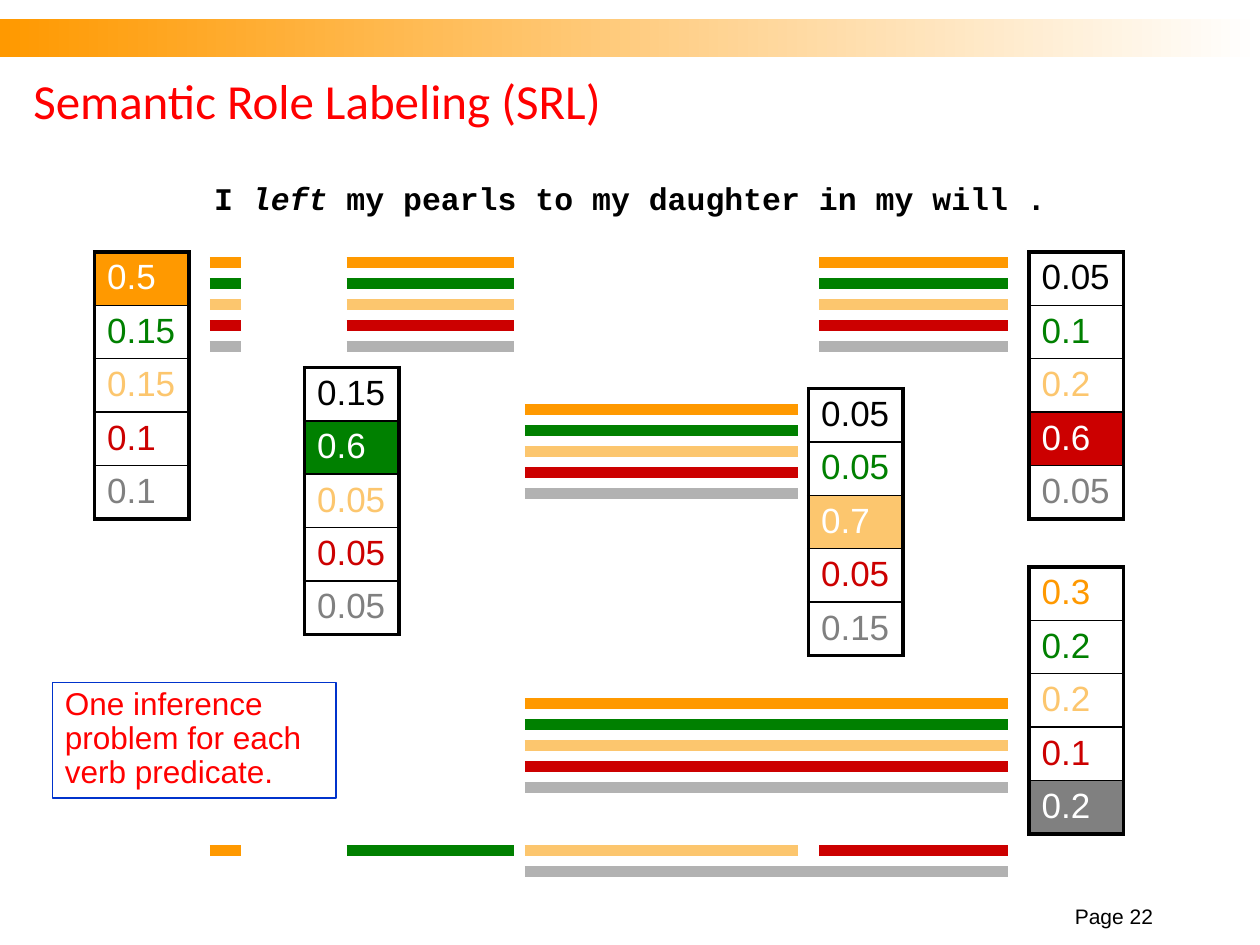
import lxml.etree
import pptx
import pptx.dml.color
import pptx.enum.dml
import pptx.enum.shapes
import pptx.enum.text
import pptx.oxml.ns
import pptx.util

THEME = {
    "roles": ["FF9900", "008000", "FCC66E", "CC0000", "B2B2B2"],
    "last_score": "808080", "text": "000000", "paper": "FFFFFF",
    "accent": "FF0000", "note_line": "0033CC",
    "title": ("Calibri", 28), "sentence": ("Courier New", 18),
    "score": ("Arial", 20), "note": ("Arial", 18), "page": ("Arial", 12),
    "bar": 6, "outer": 2.25, "inner": 1,
}
UNIT = pptx.util.Inches(1) // 12  # the slide is a grid of 120 columns by 90 rows
rgb = pptx.dml.color.RGBColor.from_string
align = pptx.enum.text.PP_ALIGN
anchor = pptx.enum.text.MSO_ANCHOR
rectangle = pptx.enum.shapes.MSO_SHAPE.RECTANGLE


def add_span(para, text, style, color, bold=False, italic=False):
    span = para.add_run()
    span.text = text
    span.font.name, size = THEME[style]
    span.font.size = pptx.util.Pt(size)
    span.font.color.rgb = rgb(color)
    span.font.bold = bold
    span.font.italic = italic


def grid(*cells):
    return [round(cell * UNIT) for cell in cells]


deck = pptx.Presentation()
deck.slide_width, deck.slide_height = grid(120, 90)
page = deck.slides.add_slide(deck.slide_layouts[6])
shapes = page.shapes

# Gradient band
band = shapes.add_shape(rectangle, *grid(0, 1.8, 120, 3.6))
band.shadow.inherit = False
band.line.fill.background()
band.fill.gradient()
band.fill.gradient_angle = 0
for stop, color in zip(band.fill.gradient_stops, (THEME["roles"][0], THEME["paper"])):
    stop.color.rgb = rgb(color)

# Title
title = shapes.add_textbox(*grid(2, 6, 108, 7)).text_frame
title.word_wrap = True
title.vertical_anchor = anchor.MIDDLE
add_span(title.paragraphs[0], "Semantic Role Labeling (SRL)", "title", THEME["accent"])

# Example sentence, with the predicate in italics
sentence = shapes.add_textbox(*grid(6, 16, 108, 65)).text_frame
sentence.word_wrap = True
sentence.margin_top = pptx.util.Inches(0.09)
para = sentence.paragraphs[0]
para.alignment = align.CENTER
for text, italic in (("I ", False), ("left", True),
                     (" my pearls to my daughter in my will .", False)):
    add_span(para, text, "sentence", THEME["text"], bold=True, italic=italic)

# Candidate arguments: one bar per role, then the chosen role of each below
arguments = [(20, 23, 25), (33, 49, 25), (50, 76, 39), (78, 96, 25), (50, 96, 67)]
bars = [(left, right, top + 2 * role, color)
        for left, right, top in arguments
        for role, color in enumerate(THEME["roles"])]
bars += [(left, right, 83 if role == 4 else 81, THEME["roles"][role])
         for role, (left, right, top) in enumerate(arguments)]
for left, right, row, color in bars:
    bar = shapes.add_connector(pptx.enum.shapes.MSO_CONNECTOR.STRAIGHT,
                               *grid(left, row, right, row))
    bar.line.color.rgb = rgb(color)
    bar.line.width = pptx.util.Pt(THEME["bar"])
    lxml.etree.SubElement(bar._element.spPr, pptx.oxml.ns.qn("a:effectLst"))

# Score tables: column, row, chosen role, colour of the first score, scores
tables = [
    (9, 24, 0, "FF9900", ["0.5", "0.15", "0.15", "0.1", "0.1"]),
    (29, 35, 1, "000000", ["0.15", "0.6", "0.05", "0.05", "0.05"]),
    (98, 24, 3, "000000", ["0.05", "0.1", "0.2", "0.6", "0.05"]),
    (77, 37, 2, "000000", ["0.05", "0.05", "0.7", "0.05", "0.15"]),
    (98, 54, 4, "FF9900", ["0.3", "0.2", "0.2", "0.1", "0.2"]),
]
for left, top, chosen, first_color, scores in tables:
    table = shapes.add_table(5, 1, *grid(left, top, 9, 24.6)).table
    table.first_row = table.horz_banding = False
    colors = [first_color] + THEME["roles"][1:4] + [THEME["last_score"]]
    for role, score in enumerate(scores):
        table.rows[role].height = pptx.util.Inches(0.41)
        cell = table.cell(role, 0)
        cell.margin_left = cell.margin_right = pptx.util.Inches(0.1)
        cell.margin_top = pptx.util.Inches(0.05)
        cell.margin_bottom = pptx.util.Inches(0.04)
        color = colors[role]
        properties = cell._tc.get_or_add_tcPr()
        for side in ("L", "R", "T", "B"):
            outer = side in "LR" or (side, role) in (("T", 0), ("B", 4))
            width = pptx.util.Pt(THEME["outer" if outer else "inner"])
            edge = lxml.etree.SubElement(
                properties, pptx.oxml.ns.qn("a:ln" + side), w=str(int(width)))
            fill = lxml.etree.SubElement(edge, pptx.oxml.ns.qn("a:solidFill"))
            lxml.etree.SubElement(fill, pptx.oxml.ns.qn("a:srgbClr"), val=THEME["text"])
        if role == chosen:
            cell.fill.solid()
            cell.fill.fore_color.rgb = rgb(color)
            color = THEME["paper"]
        else:
            cell.fill.background()
        add_span(cell.text_frame.paragraphs[0], score, "score", color)

# Note
note = shapes.add_shape(rectangle, *grid(5, 65, 27, 11))
note.shadow.inherit = False
note.fill.solid()
note.fill.fore_color.rgb = rgb(THEME["paper"])
note.line.color.rgb = rgb(THEME["note_line"])
note.line.width = pptx.util.Pt(0.75)
note.text_frame.word_wrap = True
note.text_frame.vertical_anchor = anchor.TOP
para = note.text_frame.paragraphs[0]
para.alignment = align.LEFT
para.line_spacing = 0.9
add_span(para, "One inference problem for each verb predicate.", "note", THEME["accent"])

# Page number
footer = shapes.add_textbox(*grid(99, 86, 12, 3)).text_frame
footer.word_wrap = True
footer.vertical_anchor = anchor.BOTTOM
para = footer.paragraphs[0]
para.alignment = align.RIGHT
add_span(para, "Page 22", "page", THEME["text"])

deck.save("out.pptx")
